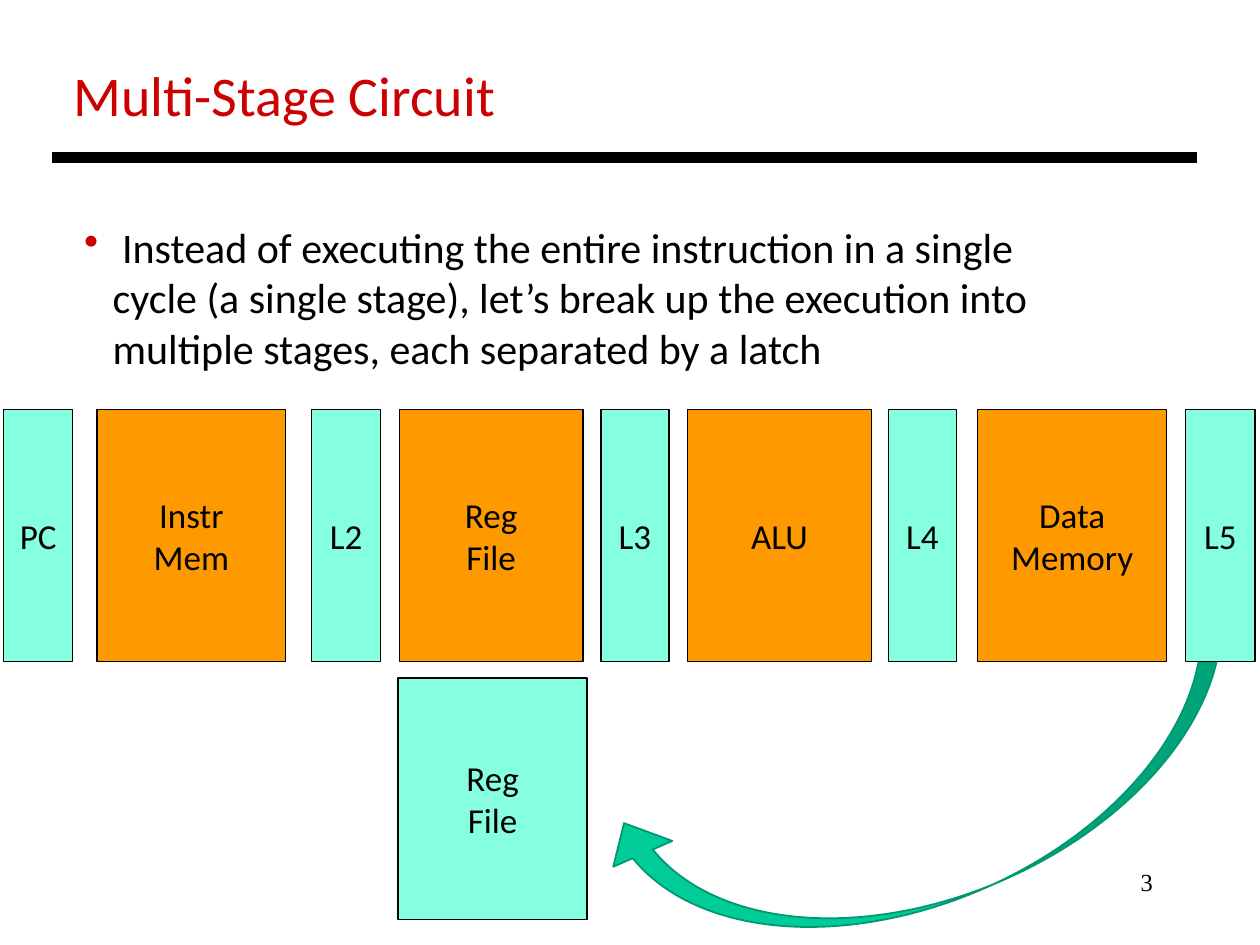
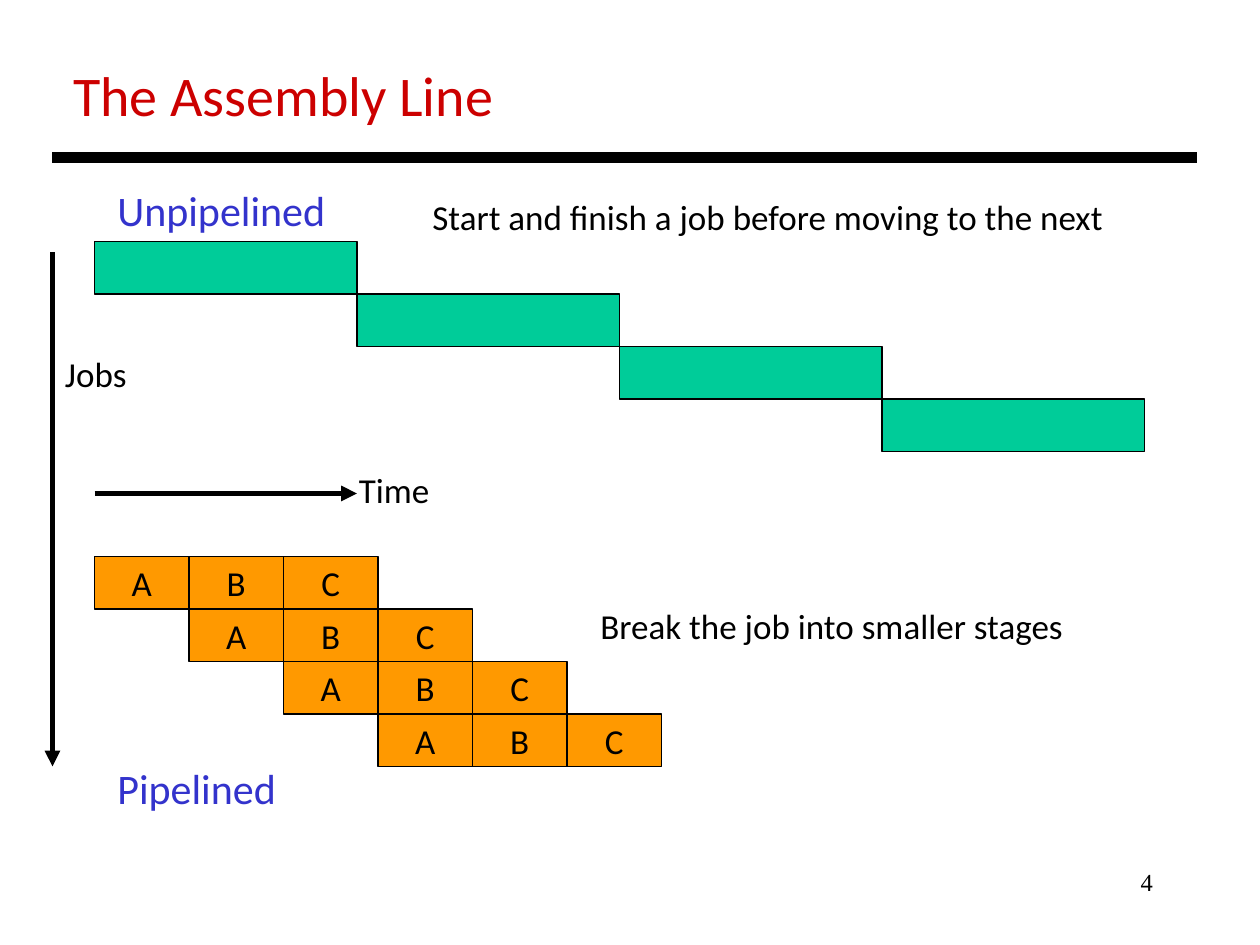
from pptx import Presentation
from pptx.dml.color import RGBColor
from pptx.enum.shapes import MSO_CONNECTOR, MSO_SHAPE as Preset
from pptx.enum.text import MSO_ANCHOR as Anchor, MSO_AUTO_SIZE as AutoSize, PP_ALIGN as Align
from pptx.oxml.ns import qn
from pptx.util import Pt
from lxml.etree import SubElement

# Colours
BLACK = RGBColor(0x00, 0x00, 0x00)
RED = RGBColor(0xCC, 0x00, 0x00)
BLUE = RGBColor(0x33, 0x33, 0xCC)
ORANGE = RGBColor(0xFF, 0x99, 0x00)
AQUA = RGBColor(0x85, 0xFF, 0xE0)
GREEN = RGBColor(0x00, 0xCC, 0x99)
DARK_GREEN = RGBColor(0x00, 0x97, 0x71)

# Text formats
TITLE = {"name": "Calibri", "size": Pt(32), "color": RED}
BODY = {"name": "Calibri", "size": Pt(24), "color": BLACK}
HEADING = {"name": "Calibri", "size": Pt(24), "color": BLUE}
LABEL = {"name": "Calibri", "size": Pt(20), "color": BLACK}
NUMBER = {"name": "Times New Roman", "size": Pt(14), "color": BLACK}
UNWRAPPED = {"word_wrap": False, "auto_size": AutoSize.SHAPE_TO_FIT_TEXT}
WRAPPED = {"word_wrap": True, "auto_size": AutoSize.NONE}
BOXED = {"word_wrap": False, "vertical_anchor": Anchor.MIDDLE}

# Multi-stage circuit: lines, left, top, width, height, colour
SUMMARY = [
    " Instead of executing the entire instruction in a single",
    "cycle (a single stage), let’s break up the execution into",
    "multiple stages, each separated by a latch",
]
STAGE_TOP, STAGE_HEIGHT = 234, 144
STAGES = [
    (["PC"], 2, 39.6, AQUA),
    (["Instr", "Mem"], 55.4, 108, ORANGE),
    (["L2"], 178, 39.6, AQUA),
    (["Reg", "File"], 228.2, 105, ORANGE),
    (["L3"], 343.4, 39, AQUA),
    (["ALU"], 393, 105, ORANGE),
    (["L4"], 507.6, 39, AQUA),
    (["Data", "Memory"], 558.7, 108, ORANGE),
    (["L5"], 677.5, 39.6, AQUA),
]
WRITE_BACK = (["Reg", "File"], (227.5, 387.5, 108, 138))
FEEDBACK = {"box": (347, 396, 383.8, 116.6), "turn": 156.4, "bends": (0.107, 0.316, 0.175)}

# Assembly line
JOBS = 4
JOB_LEFT, JOB_WIDTH, ROW_HEIGHT = 54, 150, 30
UNPIPELINED_TOP, PIPELINED_TOP = 138, 318
JOB_STAGES = "ABC"
STAGE_WIDTH = 54
CAPTIONS = [
    ("Unpipelined", (60, 102, 134.6, 36), HEADING),
    ("Pipelined", (60, 432, 105.8, 36), HEADING),
    ("Start and finish a job before moving to the next", (240, 108, 401, 31.7), LABEL),
    ("Time", (198, 264, 55.4, 31.7), LABEL),
    ("Jobs", (30, 198, 49.7, 31.7), LABEL),
    ("Break the job into smaller stages", (336, 342, 281.5, 31.7), LABEL),
]
AXES = [((30, 144), (30, 438)), ((54, 282), (204, 282))]


def apply(target, values):
    for name, value in values.items():
        setattr(target, name, value)


def write(shape, lines, style, frame, align=Align.LEFT):
    text_frame = shape.text_frame
    apply(text_frame, frame)
    text_frame.text = "\n".join(lines)
    for paragraph in text_frame.paragraphs:
        paragraph.alignment = align
        font = paragraph.runs[0].font
        apply(font, {k: v for k, v in style.items() if k != "color"})
        font.color.rgb = style["color"]


def add_text(slide, lines, box, style, frame=UNWRAPPED, align=Align.LEFT):
    shape = slide.shapes.add_textbox(*map(Pt, box))
    write(shape, lines, style, frame, align)
    return shape


def add_block(slide, box, fill, lines=(), preset=Preset.RECTANGLE, edge=BLACK, weight=0.75):
    block = slide.shapes.add_shape(preset, *map(Pt, box))
    block.shadow.inherit = False
    block.fill.solid()
    block.fill.fore_color.rgb = fill
    block.line.color.rgb = edge
    block.line.width = Pt(weight)
    if lines:
        write(block, lines, LABEL, BOXED, Align.CENTER)
    return block


def add_line(slide, start, end, weight, arrow=False):
    line = slide.shapes.add_connector(MSO_CONNECTOR.STRAIGHT, *map(Pt, start + end))
    line.line.color.rgb = BLACK
    line.line.width = Pt(weight)
    properties = line._element.spPr
    if arrow:
        SubElement(properties.find(qn("a:ln")), qn("a:tailEnd"), type="triangle")
    SubElement(properties, qn("a:effectLst"))


def add_slide(prs, title, number):
    slide = prs.slides.add_slide(prs.slide_layouts[5])
    heading = slide.shapes.title
    apply(heading, {"left": Pt(34.6), "top": Pt(31), "width": Pt(258), "height": Pt(46)})
    write(heading, [title], TITLE, {"word_wrap": False, "auto_size": AutoSize.NONE})
    add_line(slide, (30, 90), (684, 90), 6)
    add_text(slide, [number], (516, 492, 150, 36), NUMBER, WRAPPED, Align.RIGHT)
    return slide


def add_summary(slide):
    summary = add_text(slide, SUMMARY, (41, 123, 558.7, 298), BODY)
    indent = str(Pt(16.3))
    for position, paragraph in enumerate(summary.text_frame.paragraphs):
        properties = paragraph._p.get_or_add_pPr()
        properties.set("marL", indent)
        if position == 0:
            properties.set("indent", "-" + indent)
            colour = SubElement(properties, qn("a:buClr"))
            SubElement(colour, qn("a:srgbClr"), val=str(RED))
            SubElement(properties, qn("a:buChar"), char="•")


def build_circuit(prs):
    slide = add_slide(prs, "Multi-Stage Circuit", "3")
    add_summary(slide)
    # The feedback arrow lies behind the stages
    feedback = add_block(slide, FEEDBACK["box"], GREEN, preset=Preset.CURVED_DOWN_ARROW,
                         edge=DARK_GREEN, weight=1)
    feedback.rotation = FEEDBACK["turn"]
    for position, bend in enumerate(FEEDBACK["bends"]):
        feedback.adjustments[position] = bend
    for lines, left, width, colour in STAGES:
        add_block(slide, (left, STAGE_TOP, width, STAGE_HEIGHT), colour, lines)
    lines, box = WRITE_BACK
    add_block(slide, box, AQUA, lines)


def build_assembly_line(prs):
    slide = add_slide(prs, "The Assembly Line", "4")
    for job in range(JOBS):
        drop = job * ROW_HEIGHT
        # Each whole job waits for the one before
        add_block(slide, (JOB_LEFT + job * JOB_WIDTH, UNPIPELINED_TOP + drop,
                          JOB_WIDTH, ROW_HEIGHT), GREEN)
        # Each staged job starts one stage later
        for step, stage in enumerate(JOB_STAGES, start=job):
            add_block(slide, (JOB_LEFT + step * STAGE_WIDTH, PIPELINED_TOP + drop,
                              STAGE_WIDTH, ROW_HEIGHT), ORANGE, [stage])
    for start, end in AXES:
        add_line(slide, start, end, 3, arrow=True)
    for caption, box, style in CAPTIONS:
        add_text(slide, [caption], box, style)


def main():
    prs = Presentation()
    apply(prs, {"slide_width": Pt(720), "slide_height": Pt(540)})
    build_circuit(prs)
    build_assembly_line(prs)
    prs.save("out.pptx")


if __name__ == "__main__":
    main()
